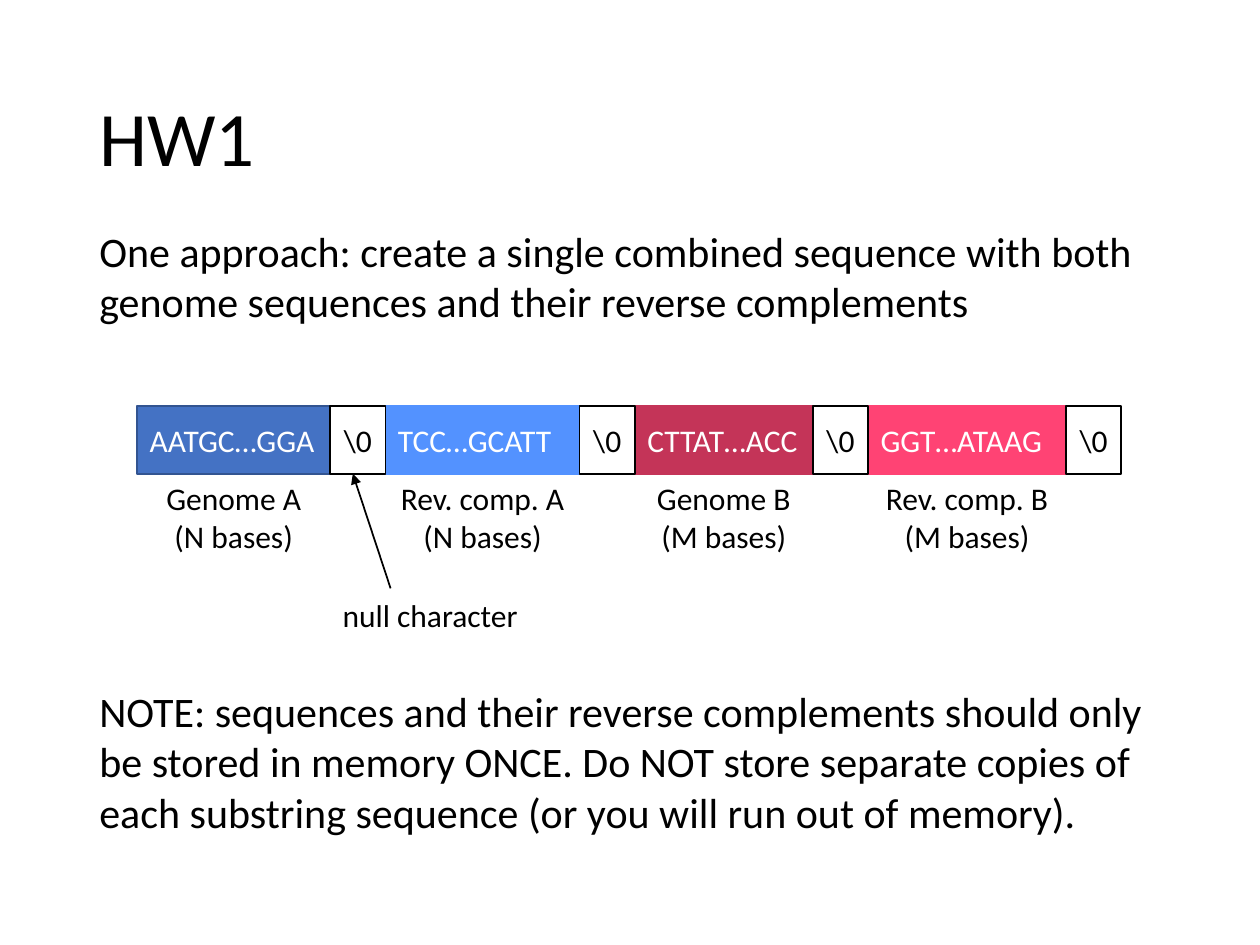
from lxml import etree
from pptx import Presentation
from pptx.dml.color import RGBColor
from pptx.enum import shapes, text
from pptx.oxml import ns
from pptx.util import Inches, Pt


def color(value):
    return RGBColor.from_string(value)


def write(box, words, size, ink="000000", align="LEFT", anchor="TOP"):
    frame = box.text_frame
    frame.word_wrap = True
    frame.vertical_anchor = text.MSO_ANCHOR[anchor]
    para = frame.paragraphs[0]
    para.text = words
    para.alignment = text.PP_ALIGN[align]
    para.font.name = "Calibri"
    para.font.size = Pt(size)
    para.font.color.rgb = color(ink)
    return para


deck = Presentation()
deck.slide_width = Inches(10)
deck.slide_height = Inches(7.5)
page = deck.slides.add_slide(deck.slide_layouts[6])

title = page.shapes.add_textbox(Inches(0.69), Inches(0.4), Inches(8.62), Inches(1.45))
write(title, "HW1", 44, anchor="MIDDLE").line_spacing = 0.9

passages = [
    (0.69, 1.74, 8.83, 0.91, 24,
     "One approach: create a single combined sequence with both genome sequences "
     "and their reverse complements"),
    (2.62, 4.68, 1.62, 0.4, 18, "null character"),
    (0.69, 5.39, 8.62, 1.31, 24,
     "NOTE: sequences and their reverse complements should only be stored in memory ONCE. "
     "Do NOT store separate copies of each substring sequence "
     "(or you will run out of memory)."),
]
for left, top, width, height, size, words in passages:
    box = page.shapes.add_textbox(Inches(left), Inches(top), Inches(width), Inches(height))
    write(box, words, size)

sequences = [
    ("AATGC…GGA", "Genome A (N bases)", 1.53, 1.3, "4472C4", "325491"),
    ("TCC…GCATT", "Rev. comp. A (N bases)", 1.54, 1.52, "5392FF", "5392FF"),
    ("CTTAT…ACC", "Genome B (M bases)", 1.41, 1.3, "C43458", "C43458"),
    ("GGT…ATAAG", "Rev. comp. B (M bases)", 1.57, 1.52, "FF4374", "FF4374"),
]
bar_top, bar_height, null_width = 3.22, 0.54, 0.44
left = 1.09
sequence_cells, null_cells = [], []
for bases, caption, width, caption_width, fill, edge in sequences:
    sequence_cells.append((left, width, bases, fill, edge, "FFFFFF", "LEFT"))
    label = page.shapes.add_textbox(Inches(left + (width - caption_width) / 2), Inches(3.75),
                                    Inches(caption_width), Inches(0.71))
    write(label, caption, 18, align="CENTER")
    left += width
    null_cells.append((left, null_width, "\\0", None, "000000", "000000", "CENTER"))
    left += null_width

for left, width, words, fill, edge, ink, align in sequence_cells + null_cells:
    cell = page.shapes.add_shape(shapes.MSO_SHAPE.RECTANGLE, Inches(left), Inches(bar_top),
                                 Inches(width), Inches(bar_height))
    cell.shadow.inherit = False
    if fill:
        cell.fill.solid()
        cell.fill.fore_color.rgb = color(fill)
    else:
        cell.fill.background()
    cell.line.color.rgb = color(edge)
    cell.line.width = Pt(1)
    write(cell, words, 18, ink, align, "MIDDLE")

arrow = page.shapes.add_connector(shapes.MSO_CONNECTOR.STRAIGHT, Inches(3.1), Inches(4.67),
                                  Inches(2.8), Inches(3.76))
arrow.line.color.rgb = color("000000")
arrow.line.width = Pt(1)
etree.SubElement(arrow.line._get_or_add_ln(), ns.qn("a:tailEnd"), type="triangle")
etree.SubElement(arrow._element.spPr, ns.qn("a:effectLst"))

deck.save("out.pptx")
